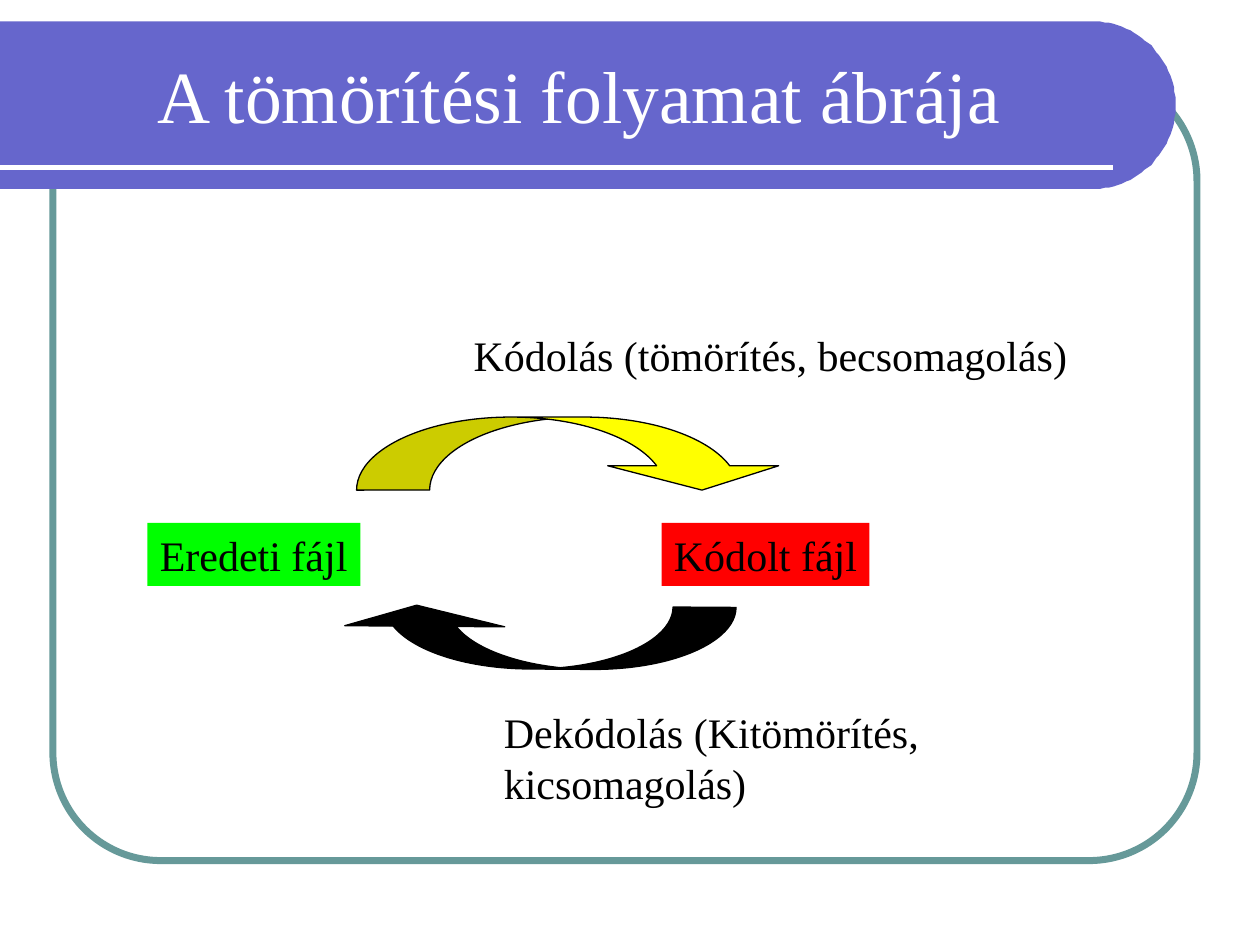
from math import cos, pi, sin

from lxml.etree import SubElement
from pptx import Presentation
from pptx.dml.color import RGBColor
from pptx.enum.shapes import MSO_CONNECTOR, MSO_SHAPE
from pptx.enum.text import MSO_ANCHOR, PP_ALIGN
from pptx.oxml.ns import qn
from pptx.util import Pt

PX = 9144
FONT = "Times New Roman"
WHITE = RGBColor(0xFF, 0xFF, 0xFF)
BLACK = RGBColor(0x00, 0x00, 0x00)
TEAL = RGBColor(0x66, 0x99, 0x99)
VIOLET = RGBColor(0x66, 0x66, 0xCC)
GREEN = RGBColor(0x00, 0xFF, 0x00)
RED = RGBColor(0xFF, 0x00, 0x00)
YELLOW = RGBColor(0xFF, 0xFF, 0x00)


def emu(*lengths):
    return [length * PX for length in lengths]


def style(shape, fill=None, line=None, width=0.75):
    shape.shadow.inherit = False
    if fill is None:
        shape.fill.background()
    else:
        shape.fill.solid()
        shape.fill.fore_color.rgb = fill
    if line is None:
        shape.line.fill.background()
    else:
        shape.line.color.rgb = line
        shape.line.width = Pt(width)


def write(shape, text, size, color, align=PP_ALIGN.LEFT, anchor=MSO_ANCHOR.TOP, wrap=False):
    frame = shape.text_frame
    frame.word_wrap = wrap
    frame.vertical_anchor = anchor
    para = frame.paragraphs[0]
    para.text = text
    para.alignment = align
    para.font.name = FONT
    para.font.size = Pt(size)
    para.font.color.rgb = color


def add_frame(page, left, top, width, height):
    frame = page.shapes.add_shape(MSO_SHAPE.ROUNDED_RECTANGLE, *emu(left, top, width, height))
    frame.adjustments[0] = 0.137
    style(frame, line=TEAL, width=4)


def add_banner(page, left, top, width, height, title):
    radius = height / 2
    center = left + width - radius
    steps = 60
    angles = [pi * step / steps - pi / 2 for step in range(steps + 1)]
    arc = [(center + radius * cos(angle), top + radius + radius * sin(angle)) for angle in angles]
    builder = page.shapes.build_freeform(left, top, scale=PX)
    builder.add_line_segments(arc + [(left, top + height)], close=True)
    style(builder.convert_to_shape(), fill=VIOLET)

    rule = page.shapes.add_connector(
        MSO_CONNECTOR.STRAIGHT, *emu(left, top + 116, left + width - 50, top + 116))
    rule.line.color.rgb = WHITE
    rule.line.width = Pt(3)
    SubElement(rule._element.spPr, qn("a:effectLst"))

    heading = page.shapes.add_textbox(*emu(left + 21, top + 8, 877, 100))
    write(heading, title, 42, WHITE, PP_ALIGN.CENTER, MSO_ANCHOR.MIDDLE, True)


def add_file(page, left, top, width, height, name, color):
    box = page.shapes.add_shape(MSO_SHAPE.RECTANGLE, *emu(left, top, width, height))
    style(box, fill=color)
    write(box, name, 24, BLACK)


def add_label(page, left, top, width, height, text):
    label = page.shapes.add_textbox(*emu(left, top, width, height))
    write(label, text, 24, BLACK)


def add_arrow(page, left, top, width, height, color, thickness, rotation=0):
    arrow = page.shapes.add_shape(MSO_SHAPE.CURVED_DOWN_ARROW, *emu(left, top, width, height))
    for index, value in enumerate((thickness, 2 * thickness, 0.333)):
        arrow.adjustments[index] = value
    arrow.rotation = rotation
    style(arrow, fill=color, line=BLACK)


def add_cycle(page, left, top):
    add_file(page, left, top + 158, 169, 50, "Eredeti fájl", GREEN)
    add_file(page, left + 408, top + 158, 165, 50, "Kódolt fájl", RED)
    add_arrow(page, left + 166, top + 74, 342, 58, YELLOW, 1.17)
    add_label(page, left + 249, top, 491, 50, "Kódolás (tömörítés, becsomagolás)")
    add_arrow(page, left + 150, top + 224, 317, 50, BLACK, 1.27, 180.4)
    add_label(page, left + 273, top + 299, 550, 50, "Dekódolás (Kitömörítés, kicsomagolás)")


def main():
    deck = Presentation()
    deck.slide_width, deck.slide_height = emu(1000, 750)
    page = deck.slides.add_slide(deck.slide_layouts[6])
    add_frame(page, 42, 58, 908, 625)
    add_banner(page, 0, 17, 933, 133, "A tömörítési folyamat ábrája")
    add_cycle(page, 117, 257)
    deck.save("out.pptx")


if __name__ == "__main__":
    main()
